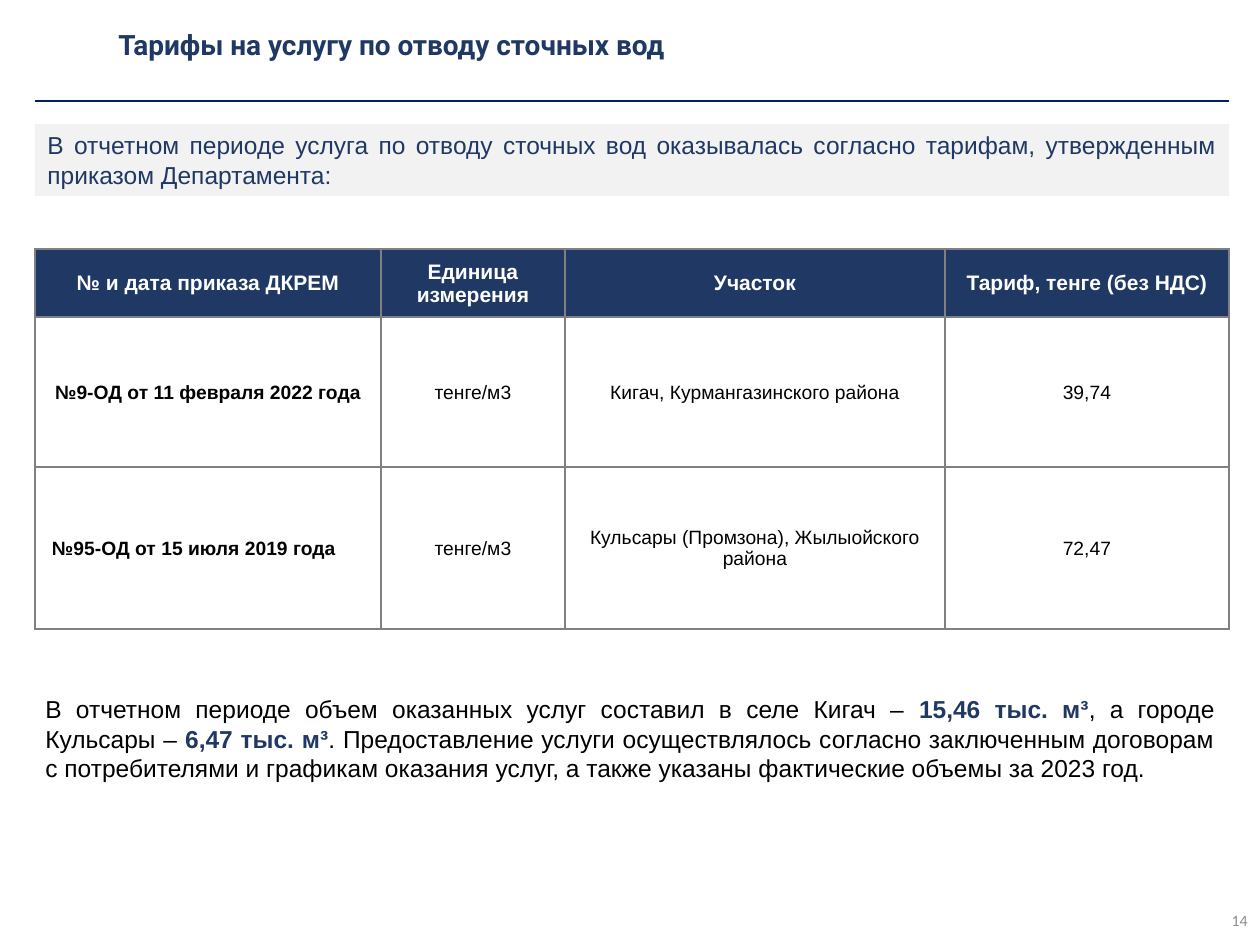
from lxml import etree
from pptx import Presentation, util as u
from pptx.dml.color import RGBColor
from pptx.enum import shapes, text
from pptx.oxml import ns

NAVY, BLACK, WHITE, GREY = "203864", "000000", "FFFFFF", "808080"
LEFT, WIDTH = 35, 1194
COLUMNS = [346, 184, 380, 284]
ROWS = [68, 150, 162]
TARIFFS = [
    ["№ и дата приказа ДКРЕМ", "Единица измерения", "Участок", "Тариф, тенге (без НДС)"],
    ["№9-ОД от 11 февраля 2022 года", "тенге/м3", "Кигач, Курмангазинского района", "39,74"],
    ["№95-ОД от 15 июля 2019 года", "тенге/м3", "Кульсары (Промзона), Жылыойского района", "72,47"],
]
INTRO = ("В отчетном периоде услуга по отводу сточных вод оказывалась согласно тарифам, "
         "утвержденным приказом Департамента:")
VOLUMES = [
    ("В отчетном периоде объем оказанных услуг составил в селе Кигач – ", BLACK, False),
    ("15,46 тыс. м³", NAVY, True),
    (", а городе Кульсары – ", BLACK, False),
    ("6,47 тыс. м³", NAVY, True),
    (". Предоставление услуги осуществлялось согласно заключенным договорам с потребителями "
     "и графикам оказания услуг, а также указаны фактические объемы за 2023 год.", BLACK, False),
]


def px(n):
    """Turn pixels at 126 to the inch into EMU."""
    return u.Emu(round(n * 914400 / 126))


def rgb(color):
    """Turn a hex string into a colour."""
    return RGBColor.from_string(color)


def write(tf, runs, size, font="Arial", align=text.PP_ALIGN.LEFT):
    """Fill the first paragraph with (text, colour, bold) runs."""
    p = tf.paragraphs[0]
    p.alignment = align
    for words, color, bold in runs:
        r = p.add_run()
        r.text = words
        r.font.size, r.font.name, r.font.bold = u.Pt(size), font, bold
        r.font.color.rgb = rgb(color)


def add_text(s, box, runs, size, anchor=text.MSO_ANCHOR.TOP, **style):
    """Add a wrapping text box."""
    tf = s.shapes.add_textbox(*map(px, box)).text_frame
    tf.word_wrap = True
    tf.vertical_anchor = anchor
    write(tf, runs, size, **style)


def add_band(s, box, color, runs, size, **style):
    """Add a filled rectangle with text."""
    sp = s.shapes.add_shape(shapes.MSO_SHAPE.RECTANGLE, *map(px, box))
    sp.shadow.inherit = False
    sp.fill.solid()
    sp.fill.fore_color.rgb = rgb(color)
    sp.line.fill.background()
    sp.text_frame.word_wrap = True
    sp.text_frame.vertical_anchor = text.MSO_ANCHOR.TOP
    write(sp.text_frame, runs, size, **style)


def add_rule(s, x1, x2, y, color):
    """Add a thin horizontal line."""
    line = s.shapes.add_connector(shapes.MSO_CONNECTOR.STRAIGHT, *map(px, (x1, y, x2, y)))
    line.line.color.rgb = rgb(color)
    line.line.width = u.Pt(1)
    etree.SubElement(line._element.spPr, ns.qn("a:effectLst"))


def add_borders(cell, color):
    """Draw all four borders of a cell ahead of its fill."""
    tc_pr = cell._tc.get_or_add_tcPr()
    for i, side in enumerate(("lnL", "lnR", "lnT", "lnB")):
        ln = etree.Element(ns.qn(f"a:{side}"), w=str(u.Pt(1)))
        fill = etree.SubElement(ln, ns.qn("a:solidFill"))
        etree.SubElement(fill, ns.qn("a:srgbClr"), val=color)
        tc_pr.insert(i, ln)


def add_tariff_table(s, y):
    """Add the tariff table with a dark header row."""
    frame = s.shapes.add_table(len(ROWS), len(COLUMNS), *map(px, (LEFT, y, WIDTH, sum(ROWS))))
    table = frame.table
    table.horz_banding = False
    for col, width in zip(table.columns, COLUMNS):
        col.width = px(width)
    for i, (row, height) in enumerate(zip(table.rows, ROWS)):
        row.height = px(height)
        for j, cell in enumerate(row.cells):
            header, shifted = i == 0, (i, j) == (2, 0)
            cell.vertical_anchor = text.MSO_ANCHOR.MIDDLE
            cell.margin_left = px(17 if shifted else 1)
            cell.margin_right = cell.margin_top = px(1)
            cell.margin_bottom = 0
            if header:
                cell.fill.solid()
                cell.fill.fore_color.rgb = rgb(NAVY)
            else:
                cell.fill.background()
            add_borders(cell, GREY)
            run = (TARIFFS[i][j], WHITE if header else BLACK, header or j == 0)
            align = text.PP_ALIGN.JUSTIFY if shifted else text.PP_ALIGN.CENTER
            write(cell.text_frame, [run], 12 if header else 11, align=align)


def main():
    """Build the slide on sewage tariffs."""
    prs = Presentation()
    prs.slide_width, prs.slide_height = px(1260), px(945)
    s = prs.slides.add_slide(prs.slide_layouts[6])
    middle, justify = text.MSO_ANCHOR.MIDDLE, text.PP_ALIGN.JUSTIFY
    add_band(s, (LEFT, 124, WIDTH, 72), "F2F2F2", [(INTRO, NAVY, False)], 14, align=justify)
    add_tariff_table(s, 249)
    add_text(s, (976, 895, 284, 50), [("14", "8C8C8C", False)], 9, middle,
             font="Calibri", align=text.PP_ALIGN.RIGHT)
    add_text(s, (106, 18, 1125, 53), [("Тарифы на услугу по отводу сточных вод", NAVY, True)],
             16, middle, font="Roboto")
    add_rule(s, LEFT, LEFT + WIDTH, 101, "002060")
    add_text(s, (33, 688, WIDTH, 102), VOLUMES, 14, align=justify)
    prs.save("out.pptx")


if __name__ == "__main__":
    main()
